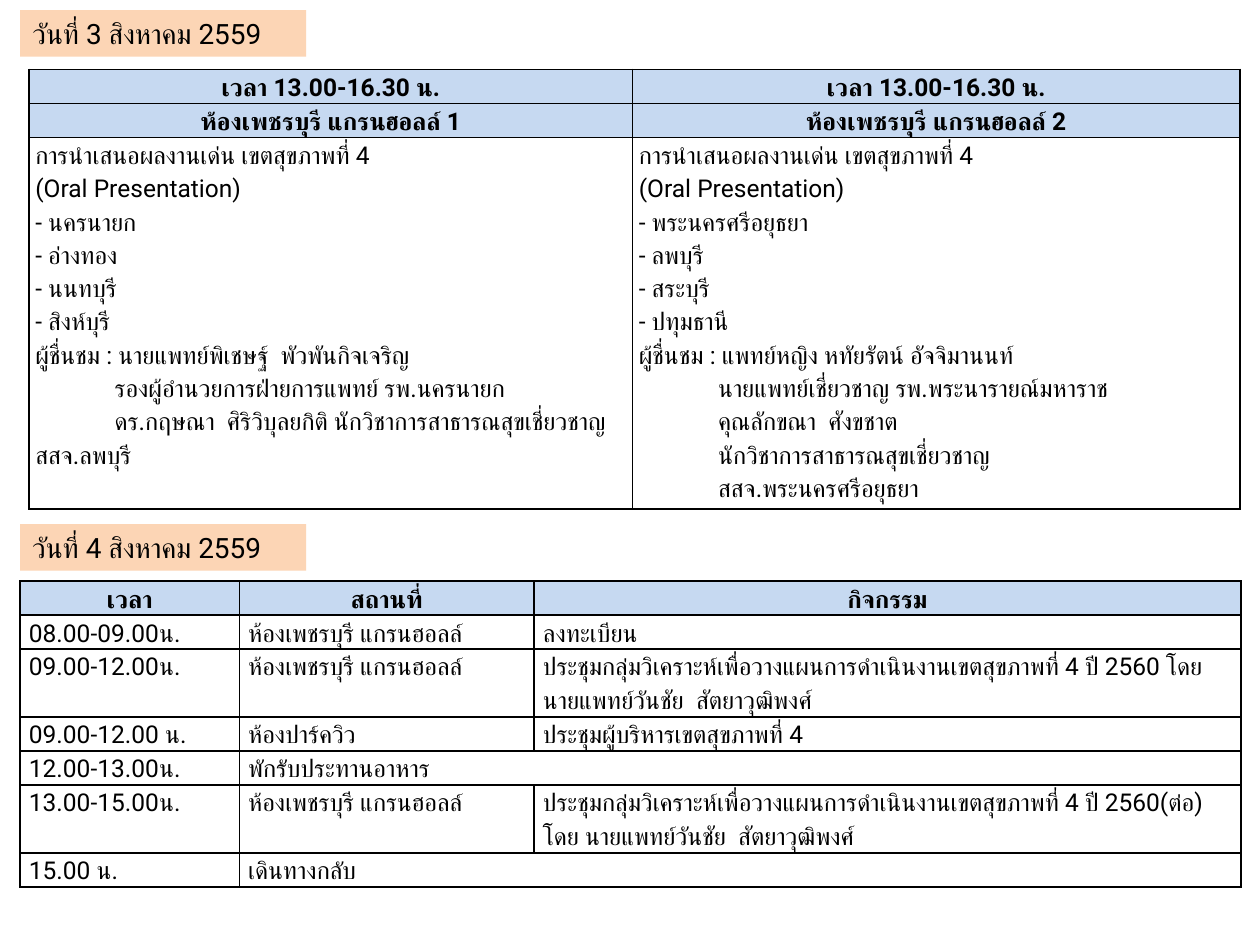
from dataclasses import dataclass

from lxml import etree
from pptx import Presentation
from pptx.dml.color import RGBColor
from pptx.enum.text import MSO_ANCHOR, PP_ALIGN
from pptx.oxml.ns import qn
from pptx.util import Inches, Pt

LEFT, CENTER = PP_ALIGN.LEFT, PP_ALIGN.CENTER
TOP = MSO_ANCHOR.TOP


@dataclass(frozen=True)
class Theme:
    font: str = "Roboto"
    ink: RGBColor = RGBColor(0x00, 0x00, 0x00)
    date_fill: RGBColor = RGBColor(0xFC, 0xD5, 0xB5)
    header_fill: RGBColor = RGBColor(0xC6, 0xD9, 0xF1)
    date_size: Pt = Pt(16)
    table_size: Pt = Pt(14)
    border: Pt = Pt(1)


theme = Theme()
HANGING = Inches(0.63)  # first-line indent of the guests' details


def style_text(paragraph, size, bold=False, align=LEFT):
    paragraph.alignment = align
    for run in paragraph.runs:
        run.font.name = theme.font
        run.font.size = size
        run.font.bold = bold
        run.font.color.rgb = theme.ink
        thai_font = etree.SubElement(run.font._element, qn("a:cs"))
        thai_font.set("typeface", theme.font)


def add_schedule(left, top, widths, heights, rows, header_rows, side_inset):
    """Each cell is a list of lines; a line starting with a tab is indented;
    None joins the cell to the one on its left."""
    schedule = slide.shapes.add_table(
        len(rows), len(widths), Inches(left), Inches(top),
        Inches(sum(widths)), Inches(sum(heights))).table
    schedule.horz_banding = False
    for column, width in zip(schedule.columns, widths):
        column.width = Inches(width)
    for row, height in zip(schedule.rows, heights):
        row.height = Inches(height)

    for r, row in enumerate(rows):
        is_header = r < header_rows
        for c, lines in enumerate(row):
            cell = schedule.cell(r, c)
            cell.margin_left = cell.margin_right = Inches(side_inset)
            cell.margin_top = cell.margin_bottom = 0

            # Borders come before the fill in the cell properties
            properties = cell._tc.get_or_add_tcPr()
            for side in ("a:lnL", "a:lnR", "a:lnT", "a:lnB"):
                line = etree.SubElement(properties, qn(side), w=str(theme.border))
                solid = etree.SubElement(line, qn("a:solidFill"))
                etree.SubElement(solid, qn("a:srgbClr"), val=str(theme.ink))
            if is_header:
                cell.fill.solid()
                cell.fill.fore_color.rgb = theme.header_fill
            else:
                cell.fill.background()

            if lines is None:
                schedule.cell(r, c - 1).merge(cell)
                continue
            cell.text_frame.text = "\n".join(text.lstrip("\t") for text in lines)
            for text, paragraph in zip(lines, cell.text_frame.paragraphs):
                style_text(paragraph, theme.table_size, is_header,
                           CENTER if is_header else LEFT)
                paragraph.line_spacing = 1.15
                if text.startswith("\t"):
                    paragraph._p.get_or_add_pPr().set("indent", str(HANGING))


deck = Presentation()
deck.slide_width, deck.slide_height = Inches(10), Inches(7.5)
slide = deck.slides.add_slide(deck.slide_layouts[5])

# Date labels
first_date = slide.shapes.title
second_date = slide.shapes.add_textbox(0, 0, 0, 0)
for label, top, date in ((first_date, 0.08, "วันที่ 3 สิงหาคม 2559"),
                         (second_date, 4.16, "วันที่ 4 สิงหาคม 2559")):
    label.left, label.top = Inches(0.16), Inches(top)
    label.width, label.height = Inches(2.27), Inches(0.37)
    label.fill.solid()
    label.fill.fore_color.rgb = theme.date_fill
    label.text_frame.text = date
    label.text_frame.word_wrap = True
    label.text_frame.vertical_anchor = TOP
    style_text(label.text_frame.paragraphs[0], theme.date_size)

# Day one: parallel presentations in two rooms
session_time = ["เวลา 13.00-16.30 น."]
session_intro = ["การนำเสนอผลงานเด่น เขตสุขภาพที่ 4", "(Oral Presentation)"]
room_one = session_intro + [
    "- นครนายก",
    "- อ่างทอง",
    "- นนทบุรี",
    "- สิงห์บุรี",
    "ผู้ชื่นชม : นายแพทย์พิเชษฐ์  พัวพันกิจเจริญ",
    "\tรองผู้อำนวยการฝ่ายการแพทย์ รพ.นครนายก",
    "\tดร.กฤษณา  ศิริวิบุลยกิติ นักวิชาการสาธารณสุขเชี่ยวชาญ สสจ.ลพบุรี",
]
room_two = session_intro + [
    "- พระนครศรีอยุธยา",
    "- ลพบุรี",
    "- สระบุรี",
    "- ปทุมธานี",
    "ผู้ชื่นชม : แพทย์หญิง หทัยรัตน์ อัจจิมานนท์",
    "\tนายแพทย์เชี่ยวชาญ รพ.พระนารายณ์มหาราช",
    "\tคุณลักขณา  ศังขชาต",
    "\tนักวิชาการสาธารณสุขเชี่ยวชาญ",
    "\tสสจ.พระนครศรีอยุธยา",
]
hall = "ห้องเพชรบุรี แกรนฮอลล์"
add_schedule(0.23, 0.55, [4.79, 4.82], [0.27, 0.27, 2.95],
             [[session_time, session_time],
              [[f"{hall} 1"], [f"{hall} 2"]],
              [room_one, room_two]],
             header_rows=2, side_inset=0.05)

# Day two: agenda by time, place and activity
workshop = "ประชุมกลุ่มวิเคราะห์เพื่อวางแผนการดำเนินงานเขตสุขภาพที่ 4 ปี 2560"
speaker = "โดย นายแพทย์วันชัย  สัตยาวุฒิพงศ์"
agenda = [
    ("เวลา", "สถานที่", "กิจกรรม"),
    ("08.00-09.00น.", hall, "ลงทะเบียน"),
    ("09.00-12.00น.", hall, f"{workshop} {speaker}"),
    ("09.00-12.00 น.", "ห้องปาร์ควิว", "ประชุมผู้บริหารเขตสุขภาพที่ 4"),
    ("12.00-13.00น.", "พักรับประทานอาหาร", None),
    ("13.00-15.00น.", hall, f"{workshop}(ต่อ) {speaker}"),
    ("15.00 น.", "เดินทางกลับ", None),
]
add_schedule(0.16, 4.61, [1.74, 2.34, 5.61],
             [0.27, 0.27, 0.54, 0.27, 0.27, 0.54, 0.27],
             [[text and [text] for text in row] for row in agenda],
             header_rows=1, side_inset=0.07)

deck.save("out.pptx")
